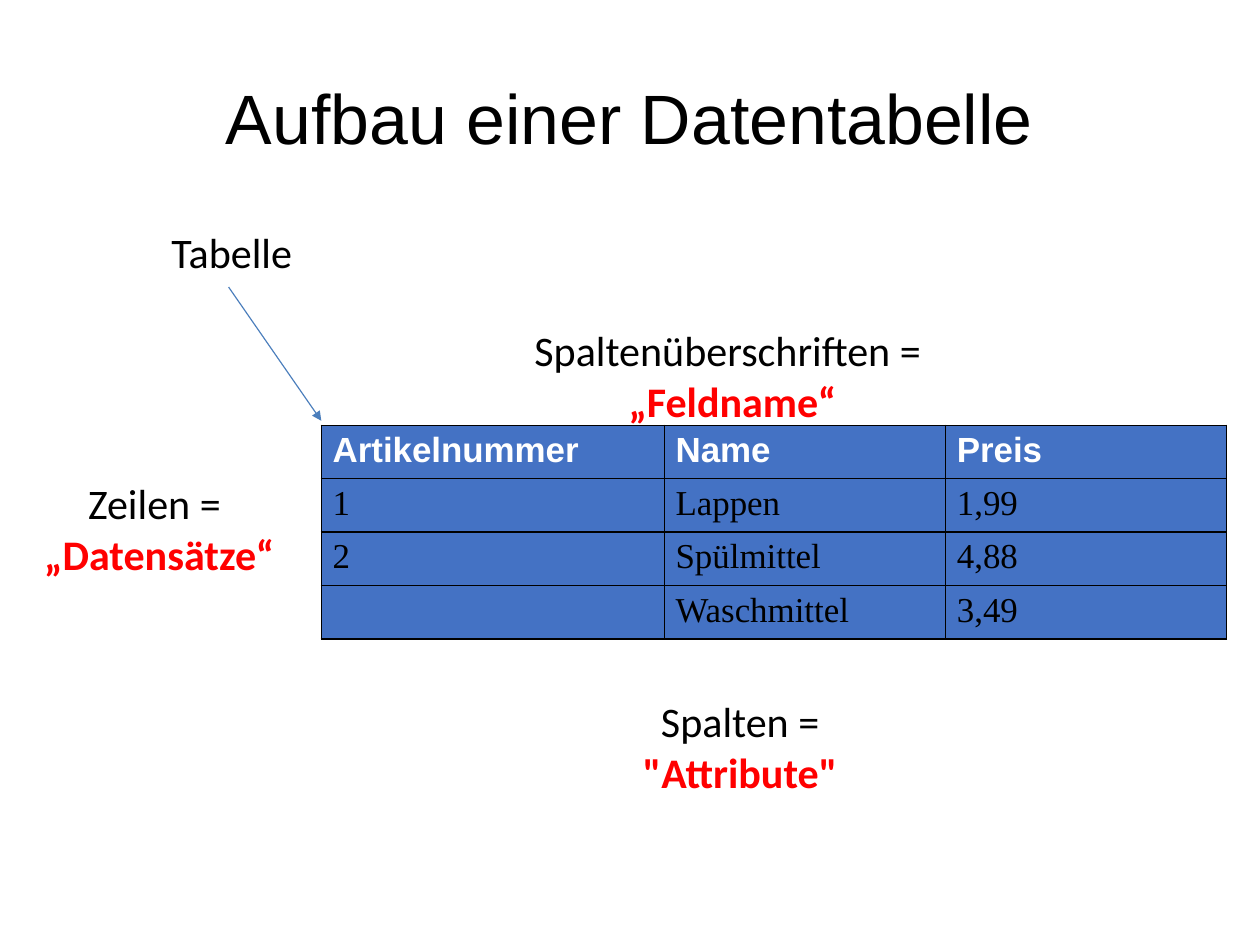
from lxml.etree import SubElement
from pptx import Presentation
from pptx.dml.color import RGBColor
from pptx.enum.shapes import MSO_CONNECTOR as Connector
from pptx.enum.text import MSO_ANCHOR as Anchor, PP_ALIGN as Align
from pptx.oxml.ns import qn
from pptx.util import Cm, Pt

COLORS = {
    "text": "000000",
    "term": "FF0000",
    "header": "FFFFFF",
    "cell": "4472C4",
    "border": "000000",
    "arrow": "4B7EBC",
}
TITLE = {"name": "Arial", "size": Pt(44), "color": "text"}
LABEL = {"name": "Calibri", "size": Pt(26.5), "color": "text"}
TERM = LABEL | {"bold": True, "color": "term"}
HEADER = {"name": "Arial", "size": Pt(22), "bold": True, "color": "header"}
VALUE = {"name": "Times New Roman", "size": Pt(22), "bold": False, "color": "text"}

ROWS = [
    ("Artikelnummer", "Name", "Preis"),
    ("1", "Lappen", "1,99"),
    ("2", "Spülmittel", "4,88"),
    ("", "Waschmittel", "3,49"),
]
COLUMN_WIDTHS = (7.62, 6.25, 6.25)
ROW_HEIGHTS = (1.19, 1.16, 1.19, 1)


def rgb(key):
    return RGBColor.from_string(COLORS[key])


def add_span(para, text, style):
    span = para.add_run()
    span.text = text
    for name, value in style.items():
        if name == "color":
            span.font.color.rgb = rgb(value)
        else:
            setattr(span.font, name, value)


def add_text(page, box, lines, align=Align.CENTER, **frame_format):
    """Write each (text, style) pair of lines as one paragraph."""
    frame = page.shapes.add_textbox(*map(Cm, box)).text_frame
    for name, value in ({"word_wrap": True} | frame_format).items():
        setattr(frame, name, value)
    for index, (text, style) in enumerate(lines):
        para = frame.add_paragraph() if index else frame.paragraphs[0]
        para.alignment = align
        add_span(para, text, style)


def add_title(page, box):
    margins = {f"margin_{side}": 0 for side in ("left", "top", "right", "bottom")}
    add_text(page, box, [("Aufbau einer Datentabelle", TITLE)],
             vertical_anchor=Anchor.MIDDLE, **margins)


def add_borders(cell):
    properties = cell._tc.get_or_add_tcPr()
    for side in ("lnL", "lnR", "lnT", "lnB"):
        line = SubElement(properties, qn(f"a:{side}"), w=str(Pt(1)))
        fill = SubElement(line, qn("a:solidFill"))
        SubElement(fill, qn("a:srgbClr"), val=COLORS["border"])


def add_data_table(page, box):
    table = page.shapes.add_table(
        len(ROWS), len(COLUMN_WIDTHS), *map(Cm, box)).table
    table.first_row = table.horz_banding = False
    for column, width in zip(table.columns, COLUMN_WIDTHS):
        column.width = Cm(width)
    for row, height, texts in zip(table.rows, ROW_HEIGHTS, ROWS):
        row.height = Cm(height)
        style = HEADER if texts is ROWS[0] else VALUE
        for cell, text in zip(row.cells, texts):
            add_borders(cell)
            cell.fill.solid()
            cell.fill.fore_color.rgb = rgb("cell")
            if text:
                add_span(cell.text_frame.paragraphs[0], text, style)


def add_arrow(page, start, end):
    arrow = page.shapes.add_connector(Connector.STRAIGHT, *map(Cm, start + end))
    arrow.line.width = Pt(0.75)
    arrow.line.color.rgb = rgb("arrow")
    SubElement(arrow.line._get_or_add_ln(), qn("a:tailEnd"), type="triangle")
    SubElement(arrow._element.spPr, qn("a:effectLst"))


def add_table_structure(page, box):
    """Place the table in its box and the labels around it."""
    left, top, width, height = box
    add_text(page, (left + 6.86, top + 5.89, 4.9, 2.51),
             [("Spalten =", LABEL), ('"Attribute"', TERM)])
    add_data_table(page, box)
    add_text(page, (left - 6.43, top + 1.04, 5.66, 2.51),
             [("Zeilen = ", LABEL), ("„Datensätze“", TERM)])
    add_text(page, (left + 4.44, top - 2.36, 9.4, 2.51),
             [("Spaltenüberschriften = ", LABEL), ("„Feldname“", TERM)])
    add_text(page, (left - 3.58, top - 4.55, 4.06, 1.4),
             [("Tabelle", LABEL)], align=Align.LEFT)
    add_arrow(page, (left - 2.06, top - 3.07), (left, top - 0.1))


def main():
    deck = Presentation()
    deck.slide_width, deck.slide_height = Cm(28), Cm(21)
    page = deck.slides.add_slide(deck.slide_layouts[6])
    add_title(page, (1.4, 0.84, 25.2, 3.5))
    add_table_structure(page, (7.14, 9.45, sum(COLUMN_WIDTHS), sum(ROW_HEIGHTS)))
    deck.save("out.pptx")


if __name__ == "__main__":
    main()
